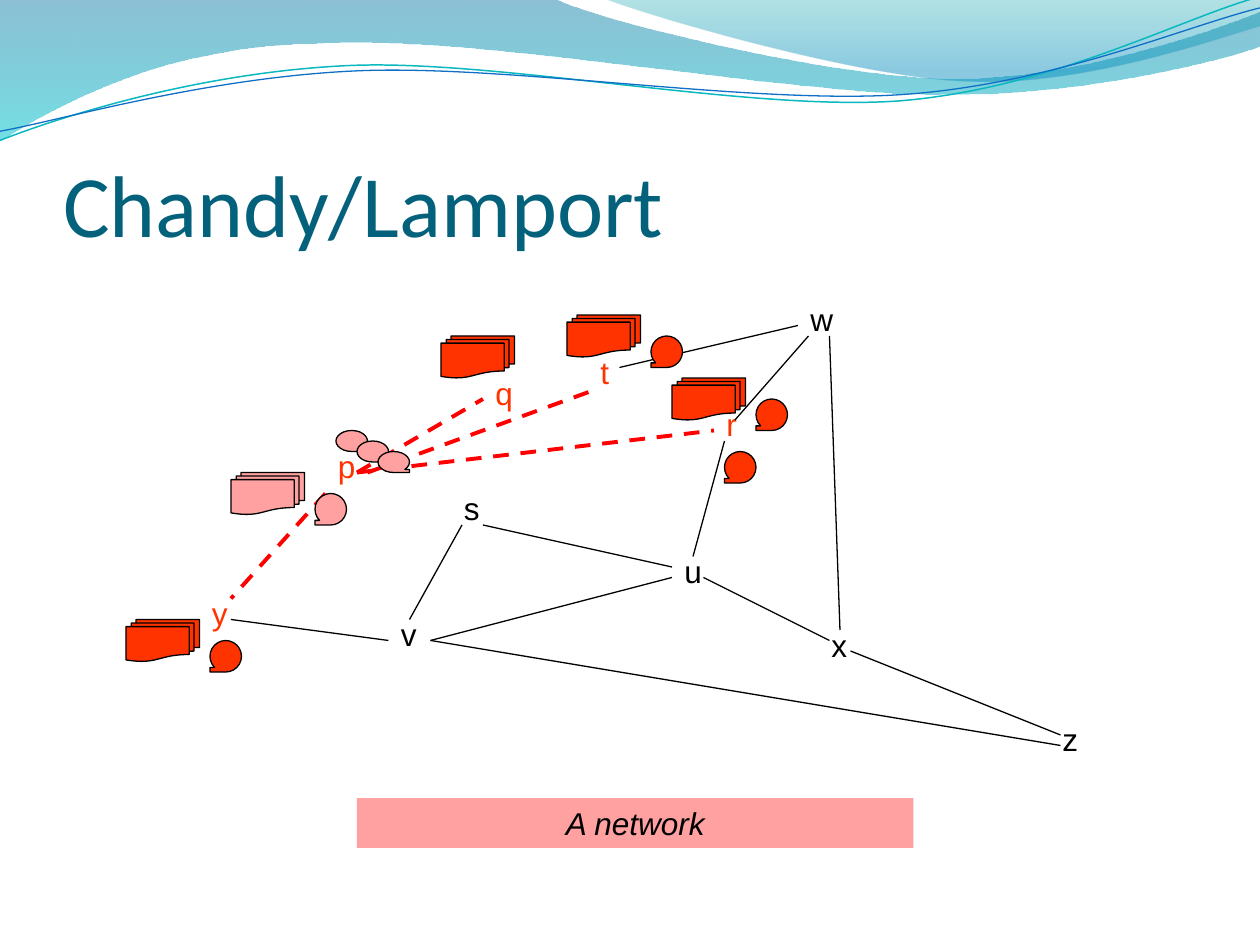
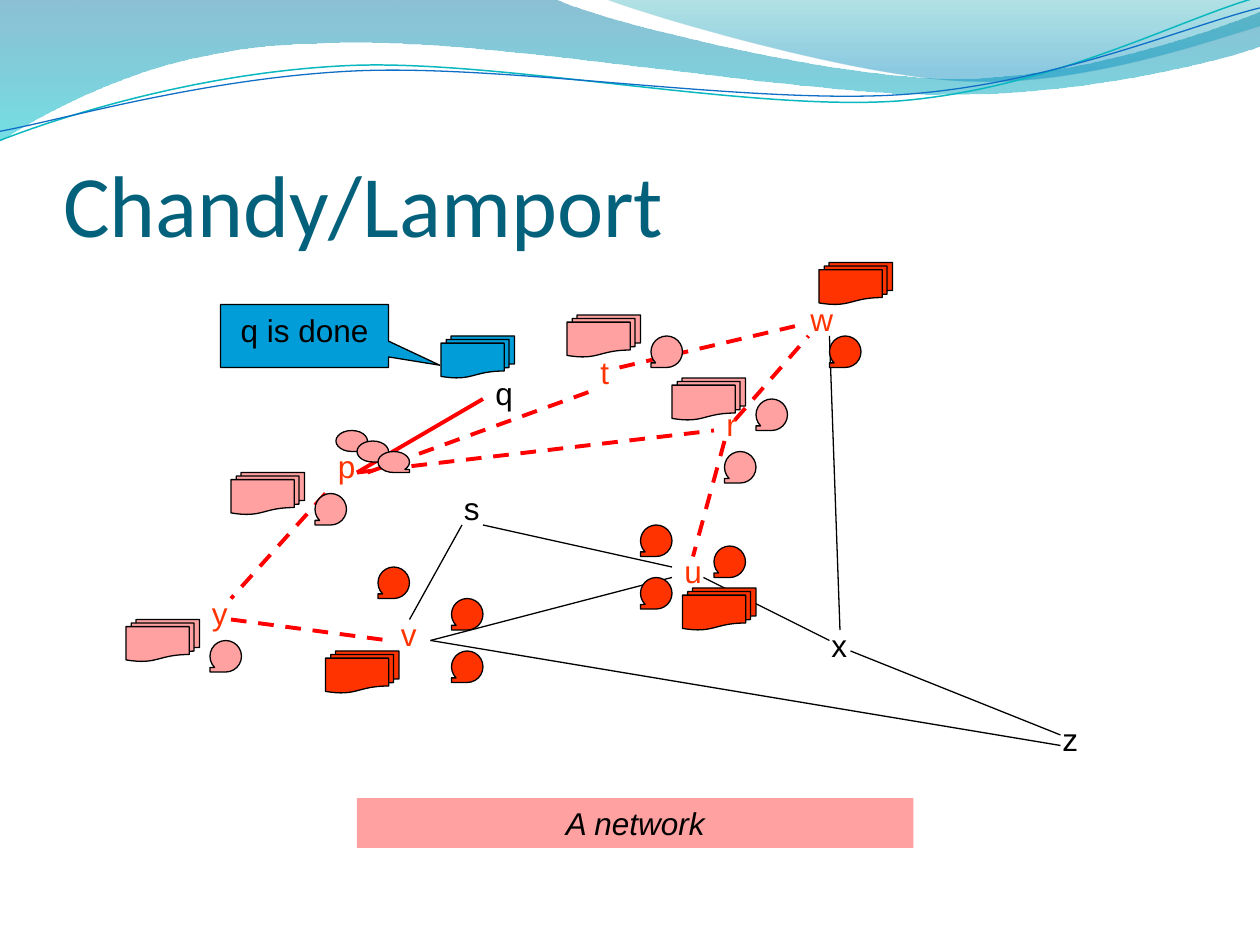
import collections
import itertools

import pptx
import pptx.dml.color
import pptx.enum.dml
import pptx.enum.shapes
import pptx.enum.text
import pptx.oxml.ns
import pptx.util

PX = 9525  # EMU in one px, 96 px to the inch
SHAPE = pptx.enum.shapes.MSO_SHAPE
ALIGN = pptx.enum.text.PP_ALIGN
qn = pptx.oxml.ns.qn

COLORS = {
    "title": "04617B", "black": "000000", "link": "FF0000",
    "recording": "FF3300", "waiting": "FFA1A1", "done": "009DD9",
    "wave_top": "0074A1", "wave_bottom": "00C6CF",
    "crest_top": "00A1A9", "crest_bottom": "008BBF",
    "teal_line": "0AB8BF", "blue_line": "0F6FC6",
}

Box = collections.namedtuple("Box", "left top width height")
SLIDE = Box(0, 0, 960, 720)
BAND = Box(0, 0, 960, 108)
TITLE = Box(48, 74, 872, 120)
NETWORK = Box(96, 200, 744, 382)
CAPTION = Box(272, 608, 424, 38)
CALLOUT = Box(168, 232, 128, 48)

# Each outline is a start point, then lines (one point) and curves (three points)
WAVE = [[(0, -1)], [(422, -1)],
        [(457, 16), (637, 60), (728, 60)], [(819, 60), (920, 25), (960, 9)],
        [(961, 35)], [(944, 42), (835, 73), (716, 72)],
        [(596, 72), (367, 27), (247, 33)], [(124, 34), (44, 80), (-1, 108)],
        [(0, -1)]]
CREST = [[(460, -1)], [(489, 11), (655, 60), (738, 62)],
         [(823, 66), (923, 31), (960, 20)], [(960, 0)], [(460, -1)]]
TEAL_LINE = [[(0, 107)], [(46, 89), (152, 55), (266, 50)],
             [(379, 45), (569, 85), (684, 77)], [(800, 68), (900, 14), (958, -2)]]
BLUE_LINE = [[(0, 100)], [(45, 92), (157, 59), (272, 54)],
             [(387, 49), (573, 80), (688, 72)], [(803, 64), (903, 20), (960, 6)]]

# Network parts, measured from the corner of the network box
NODES = {
    "p": (152, 136), "q": (272, 80), "r": (448, 104), "s": (248, 168),
    "t": (352, 64), "u": (416, 216), "v": (200, 264), "w": (512, 24),
    "x": (528, 272), "y": (56, 248), "z": (704, 344),
}
LINKS = {
    "py": (152, 176, 80, 256), "yv": (80, 272, 200, 288),
    "sv": (256, 200, 216, 272), "pr": (176, 160, 448, 128),
    "pq": (176, 160, 272, 104), "pt": (184, 160, 360, 96),
    "rw": (464, 120, 520, 56), "ru": (456, 136, 432, 224),
    "vz": (232, 288, 712, 368), "vu": (232, 288, 416, 240),
    "tw": (376, 80, 512, 48), "wx": (536, 56, 544, 280),
    "ux": (440, 240, 536, 288), "su": (272, 200, 416, 232),
    "xz": (552, 296, 712, 360),
}
DOCUMENTS = {
    "p": (80, 160), "y": (0, 272), "q": (240, 56), "t": (336, 40),
    "r": (416, 88), "v": (152, 296), "w": (528, 0), "u": (424, 248),
}
TAPES = {
    "p": [(144, 176)], "y": [(64, 288)], "t": [(400, 56)],
    "r": [(480, 104), (456, 144)],
    "v": [(248, 256), (248, 296), (192, 232)],
    "u": [(448, 216), (392, 240), (392, 200)], "w": [(536, 56)],
}
REPLIES = [(160 + 16 * i, 128 + 8 * i) for i in range(3)]

# What changes from step to step of the algorithm
STEPS = [
    {"states": {"p": "waiting", **dict.fromkeys("yqtr", "recording")},
     "dashed": {"py", "pr", "pq", "pt"}, "solid": set(), "callout": None},
    {"states": {"p": "waiting", "y": "waiting", "q": "done", "t": "waiting",
                "r": "waiting", **dict.fromkeys("vuw", "recording")},
     "dashed": {"py", "pr", "pt", "yv", "rw", "ru", "tw"},
     "solid": {"pq"}, "callout": "q is done"},
]


def color(name):
    return pptx.dml.color.RGBColor.from_string(COLORS[name])


def emu(box):
    return [pptx.util.Emu(length * PX) for length in box]


def within(box, x, y, width=0, height=0):
    return Box(box.left + x, box.top + y, width, height)


def set_line(shape, name, width):
    shape.line.color.rgb = color(name)
    shape.line.width = pptx.util.Pt(width)


def write(shape, text, name="black", size=18, font="Arial", italic=False,
          align=ALIGN.LEFT, grow=False):
    frame = shape.text_frame
    frame.text = text
    frame.word_wrap = True
    frame.vertical_anchor = pptx.enum.text.MSO_ANCHOR.TOP
    if grow:
        frame.auto_size = pptx.enum.text.MSO_AUTO_SIZE.SHAPE_TO_FIT_TEXT
    paragraph = frame.paragraphs[0]
    paragraph.alignment = align
    run = paragraph.runs[0]
    run.font.size = pptx.util.Pt(size)
    run.font.name = font
    run.font.italic = italic
    run.font.color.rgb = color(name)
    return frame


def add_figure(slide, kind, box, fill, outlined=True):
    shape = slide.shapes.add_shape(kind, *emu(box))
    shape.shadow.inherit = False
    shape.fill.solid()
    shape.fill.fore_color.rgb = color(fill)
    if outlined:
        set_line(shape, "black", 0.75)
    else:
        shape.line.fill.background()
    return shape


# Band at the top of the layout
def add_outline(slide, box, outline, close):
    points = [(box.left + x, box.top + y) for x, y in itertools.chain(*outline)]
    builder = slide.shapes.build_freeform(*points[0], scale=PX)
    builder.add_line_segments(points[1:], close=close)
    shape = builder.convert_to_shape()
    shape.shadow.inherit = False
    # Join the three points of each curve into one Bézier segment
    lines = iter(list(shape.element.iter(qn("a:lnTo"))))
    for segment in outline[1:]:
        parts = list(itertools.islice(lines, len(segment)))
        if len(parts) == 3:
            curve = parts[0].makeelement(qn("a:cubicBezTo"), {})
            parts[0].addprevious(curve)
            for part in parts:
                curve.append(part[0])
                part.getparent().remove(part)
    return shape


def add_gradient_area(slide, box, outline, stops):
    shape = add_outline(slide, box, outline, close=True)
    shape.line.fill.background()
    shape.fill.gradient()
    shape.fill.gradient_angle = 270
    for stop, (position, name, _) in zip(shape.fill.gradient_stops, stops):
        stop.position = position
        stop.color.rgb = color(name)
    gradient = shape.element.spPr.find(qn("a:gradFill"))
    for element, (_, _, opacity) in zip(gradient.iter(qn("a:srgbClr")), stops):
        alpha = element.makeelement(qn("a:alpha"), {"val": str(opacity * 1000)})
        element.append(alpha)
    return shape


def add_curve(slide, box, outline, name, width):
    shape = add_outline(slide, box, outline, close=False)
    shape.fill.background()
    set_line(shape, name, width)
    return shape


def add_band(slide, layout, box):
    parts = [
        add_gradient_area(slide, box, WAVE, [(0, "wave_top", 45), (1, "wave_bottom", 55)]),
        add_gradient_area(slide, box, CREST, [(0, "crest_top", 30), (0.8, "crest_bottom", 45)]),
        add_curve(slide, box, TEAL_LINE, "teal_line", 0.85),
        add_curve(slide, box, BLUE_LINE, "blue_line", 0.75),
    ]
    # Move the parts behind everything on the layout, so that every slide shows them
    for index, shape in enumerate(parts):
        next(shape.element.iter(qn("p:cNvPr"))).set("id", str(100 + index))
        layout.shapes.element.insert(2 + index, shape.element)


# Title
def add_title(slide, box, text):
    title = slide.shapes.title
    title.left, title.top, title.width, title.height = emu(box)
    frame = write(title, text, "title", 50, "Calibri")
    frame.vertical_anchor = pptx.enum.text.MSO_ANCHOR.BOTTOM
    frame.margin_left = frame.margin_right = frame.margin_bottom = 0
    frame.margin_top = pptx.util.Inches(0.05)


# Network: letters and links
def add_network(slide, box, step):
    for letter, corner in NODES.items():
        active = step["states"].get(letter) in ("recording", "waiting")
        node = slide.shapes.add_textbox(*emu(within(box, *corner, 40, 38)))
        write(node, letter, "recording" if active else "black", grow=True)
    for name, (x1, y1, x2, y2) in LINKS.items():
        start, end = within(box, x1, y1), within(box, x2, y2)
        link = slide.shapes.add_connector(
            pptx.enum.shapes.MSO_CONNECTOR.STRAIGHT, *emu(start[:2] + end[:2]))
        properties = link.element.spPr
        marked = name in step["dashed"] | step["solid"]
        set_line(link, "link" if marked else "black", 2.25 if marked else 0.75)
        if name in step["dashed"]:
            link.line.dash_style = pptx.enum.dml.MSO_LINE.DASH
        properties.append(properties.makeelement(qn("a:effectLst"), {}))


# Recorded states (documents) and channel recordings (tapes)
def add_recordings(slide, box, step):
    for letter, state in step["states"].items():
        add_figure(slide, SHAPE.FLOWCHART_MULTIDOCUMENT,
                   within(box, *DOCUMENTS[letter], 56, 32), state)
        if letter == "p":
            for corner in REPLIES:
                add_figure(slide, SHAPE.FLOWCHART_SEQUENTIAL_ACCESS_STORAGE,
                           within(box, *corner, 24, 16), state)
        for corner in TAPES.get(letter, []):
            tape = add_figure(slide, SHAPE.FLOWCHART_SEQUENTIAL_ACCESS_STORAGE,
                              within(box, *corner, 24, 24), state)
            tape.element.spPr.find(qn("a:xfrm")).set("flipH", "1")


def add_caption(slide, box, text):
    caption = add_figure(slide, SHAPE.RECTANGLE, box, "waiting", outlined=False)
    write(caption, text, italic=True, align=ALIGN.CENTER, grow=True)


def add_callout(slide, box, text):
    callout = add_figure(slide, SHAPE.RECTANGULAR_CALLOUT, box, "done")
    callout.adjustments[0] = 0.805
    callout.adjustments[1] = 0.465
    write(callout, text, align=ALIGN.CENTER)


def add_step_slide(presentation, layout, step):
    slide = presentation.slides.add_slide(layout)
    add_title(slide, TITLE, "Chandy/Lamport")
    add_network(slide, NETWORK, step)
    add_caption(slide, CAPTION, "A network")
    add_recordings(slide, NETWORK, step)
    if step["callout"]:
        add_callout(slide, CALLOUT, step["callout"])
    return slide


def main():
    presentation = pptx.Presentation()
    presentation.slide_width, presentation.slide_height = emu(SLIDE)[2:]
    layout = presentation.slide_layouts.get_by_name("Title Only")
    slides = [add_step_slide(presentation, layout, step) for step in STEPS]
    add_band(slides[0], layout, BAND)
    presentation.save("out.pptx")


if __name__ == "__main__":
    main()
